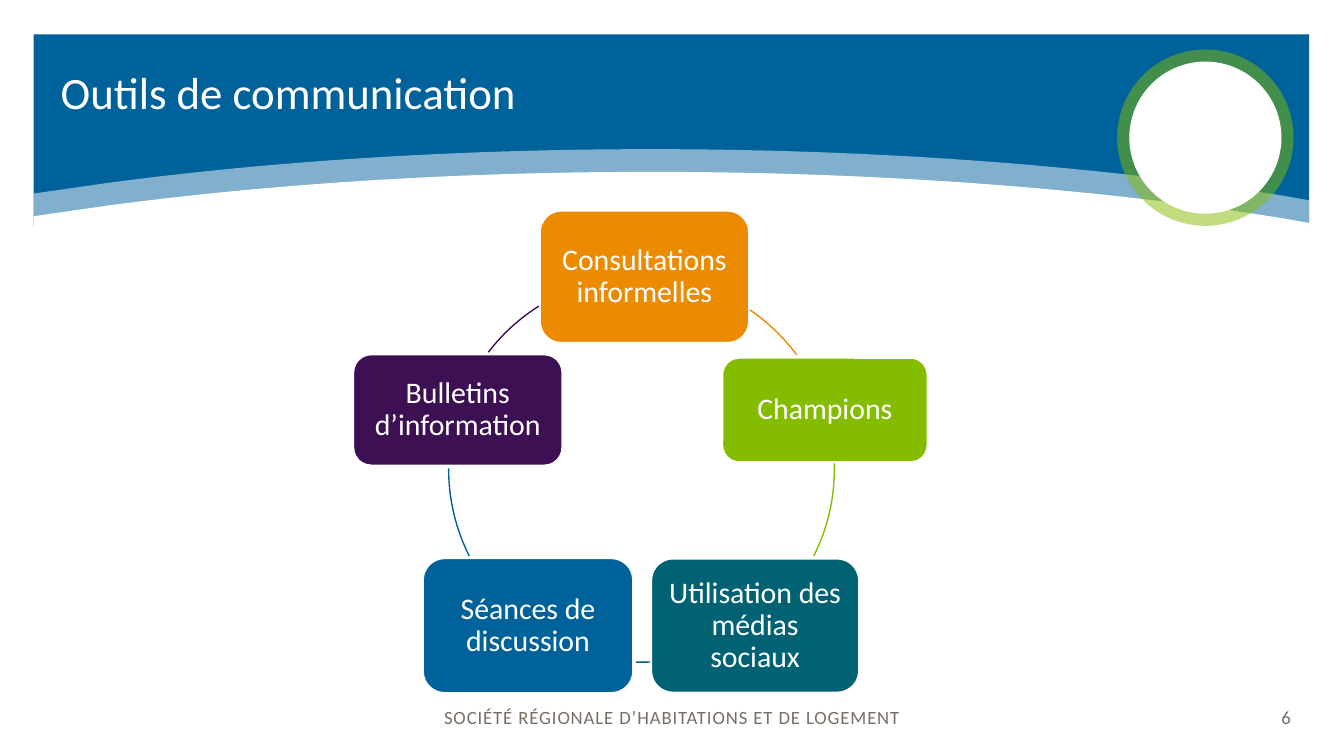
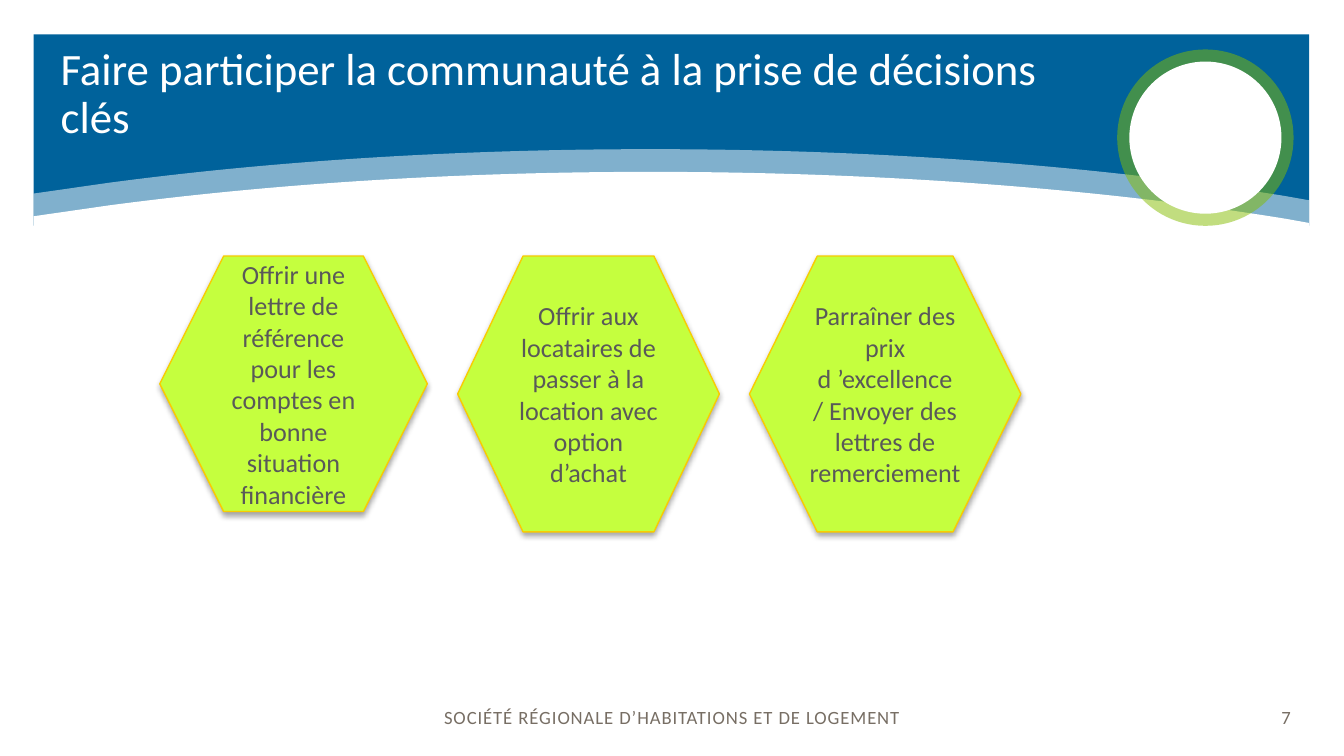
from lxml import etree
from pptx import Presentation
from pptx.dml import color
from pptx.enum import shapes, text
from pptx.oxml import ns
from pptx.util import Pt

WHITE, BLUE, GREEN = "FFFFFF", "00629B", "84BD00"
ORANGE, TEAL, PURPLE = "ED8B00", "006272", "3C1053"
GREY, LIME, GOLD, DARK_GREY = "776E64", "C5FF3E", "F9CC00", "595959"
FOOTER = "SOCIÉTÉ RÉGIONALE D’HABITATIONS ET DE LOGEMENT"
LEFT, RIGHT, CURVE_BOTTOM = 18, 701.3, 128.9
PRESET = shapes.MSO_SHAPE
ALIGN = text.PP_ALIGN


def paint(shape, fill=None, line=None, width=0.75, opacity=None):
    """Set fill and outline from hex strings; None means no fill or no outline."""
    shape.shadow.inherit = False
    for part, value in ((shape.fill, fill), (shape.line.fill, line)):
        if value is None:
            part.background()
        else:
            part.solid()
            part.fore_color.rgb = color.RGBColor.from_string(value)
    if line:
        shape.line.width = Pt(width)
    if opacity:
        fill_color = shape.element.spPr.find(ns.qn("a:solidFill"))[0]
        etree.SubElement(fill_color, ns.qn("a:alpha"), val=str(opacity * 1000))
    return shape


def write(shape, content, size=16, ink=WHITE, align=ALIGN.CENTER, inset=None,
          line_spacing=None, tracking=None):
    """Put text in a shape, one paragraph per line, centred vertically."""
    frame = shape.text_frame
    frame.word_wrap = True
    frame.vertical_anchor = text.MSO_ANCHOR.MIDDLE
    if inset is not None:
        frame.margin_left = frame.margin_right = Pt(inset)
        frame.margin_top = frame.margin_bottom = Pt(inset)
    frame.text = content
    for paragraph in frame.paragraphs:
        paragraph.alignment = align
        paragraph.line_spacing = line_spacing
        for run in paragraph.runs:
            run.font.name = "Calibri"
            run.font.size = Pt(size)
            run.font.color.rgb = color.RGBColor.from_string(ink)
            if tracking:
                run.font._element.set("spc", str(int(tracking * 100)))


presentation = Presentation()
presentation.slide_width, presentation.slide_height = Pt(720), Pt(405)

# Shared frame: curved band, footer, ring, title and page number
slides = []
for title, number in (
    ("Outils de communication", 6),
    ("Faire participer la communauté à la prise de décisions clés", 7),
):
    slide = presentation.slides.add_slide(presentation.slide_layouts[6])
    slides.append(slide)
    band = slide.shapes.add_shape(
        PRESET.RECTANGLE, Pt(LEFT), Pt(18.5), Pt(RIGHT - LEFT), Pt(102.4))
    paint(band, BLUE)

    for top, opacity in ((79.9, 50), (92.1, None)):
        outline = [(Pt(x), Pt(y)) for x, y in (
            (348.5, top), (474.5, top), (591.8, top + 9.4), (689, top + 25.2),
            (RIGHT, top + 27.4), (RIGHT, CURVE_BOTTOM), (LEFT, CURVE_BOTTOM),
            (LEFT, top + 23.8), (58.3, top + 18),
            (144.7, top + 6.5), (243.4, top), (348.5, top))]
        builder = slide.shapes.build_freeform(*outline[0])
        builder.add_line_segments(outline[1:], close=True)
        curve = paint(builder.convert_to_shape(), WHITE, opacity=opacity)
        # The first and last three segments are the points of Bézier curves
        segments = list(curve.element.iter(ns.qn("a:lnTo")))
        for first in (0, len(segments) - 3):
            bezier = etree.Element(ns.qn("a:cubicBezTo"))
            segments[first].addprevious(bezier)
            for segment in segments[first:first + 3]:
                bezier.append(segment[0])
                segment.getparent().remove(segment)

    footer = slide.shapes.add_shape(PRESET.RECTANGLE, 0, Pt(363.6), Pt(720), Pt(41.4))
    write(paint(footer, WHITE), FOOTER, size=10, ink=GREY, inset=0, tracking=0.5)

    for left, top, diameter, fill, opacity in (
        (598.5, 26.5, 94.5, GREEN, 50),
        (605, 33, 81.5, WHITE, None),
    ):
        disc = slide.shapes.add_shape(
            PRESET.OVAL, Pt(left), Pt(top), Pt(diameter), Pt(diameter))
        paint(disc, fill, opacity=opacity)

    title_box = slide.shapes.add_textbox(Pt(25.4), Pt(18.5), Pt(566), Pt(64))
    write(title_box, title, size=24, align=ALIGN.LEFT, line_spacing=Pt(26))
    number_box = slide.shapes.add_textbox(Pt(658.3), Pt(363.6), Pt(40.3), Pt(41.4))
    write(number_box, str(number), size=10, ink=GREY, align=ALIGN.RIGHT, tracking=0.5)

tools_slide, community_slide = slides

# Cycle of tools; arc angles are degrees clockwise from the right
for label, fill, box, angles in (
    ("Consultations informelles", ORANGE, (288.8, 112.4, 113, 71.8), (304.2, 324)),
    ("Champions", GREEN, (386.5, 191.2, 110.9, 56.9), (358.2, 27.2)),
    ("Utilisation des médias sociaux", TEAL, (348.4, 298.8, 112.3, 72.7), (87.4, 92.2)),
    ("Séances de discussion", BLUE, (226.1, 298.6, 113.6, 73.2), (153.3, 180.6)),
    ("Bulletins d’information", PURPLE, (188.8, 189.4, 113, 60.5), (217.4, 237.8)),
):
    node = tools_slide.shapes.add_shape(PRESET.ROUNDED_RECTANGLE, *map(Pt, box))
    write(paint(node, fill, WHITE, 2), label, inset=5, line_spacing=0.9)
    arc = tools_slide.shapes.add_shape(
        PRESET.ARC, Pt(240.4), Pt(148.2), Pt(206.6), Pt(206.6))
    for index, angle in enumerate(angles):
        arc.adjustments[index] = angle * 0.6
    paint(arc, line=fill)

# Hexagons with a soft shadow below
for label, left, width, height in (
    ("Offrir une lettre de référence pour les comptes en bonne situation financière",
     85.6, 143.3, 136.9),
    ("Offrir aux locataires de passer à la location avec option d’achat",
     245.2, 140.2, 147.8),
    ("Parraîner des prix\vd ’excellence\n/ Envoyer des lettres de remerciement",
     401.5, 145.4, 147.8),
):
    hexagon = community_slide.shapes.add_shape(
        PRESET.HEXAGON, Pt(left), Pt(137.2), Pt(width), Pt(height))
    write(paint(hexagon, LIME, GOLD), label, size=14, ink=DARK_GREY)
    effects = hexagon.element.spPr.find(ns.qn("a:effectLst"))
    shadow = etree.SubElement(
        effects, ns.qn("a:outerShdw"), blurRad=str(Pt(3.1)), dist=str(Pt(1.8)),
        dir=str(90 * 60000), rotWithShape="0")
    shadow_color = etree.SubElement(shadow, ns.qn("a:srgbClr"), val="000000")
    etree.SubElement(shadow_color, ns.qn("a:alpha"), val="35000")

presentation.save("out.pptx")
